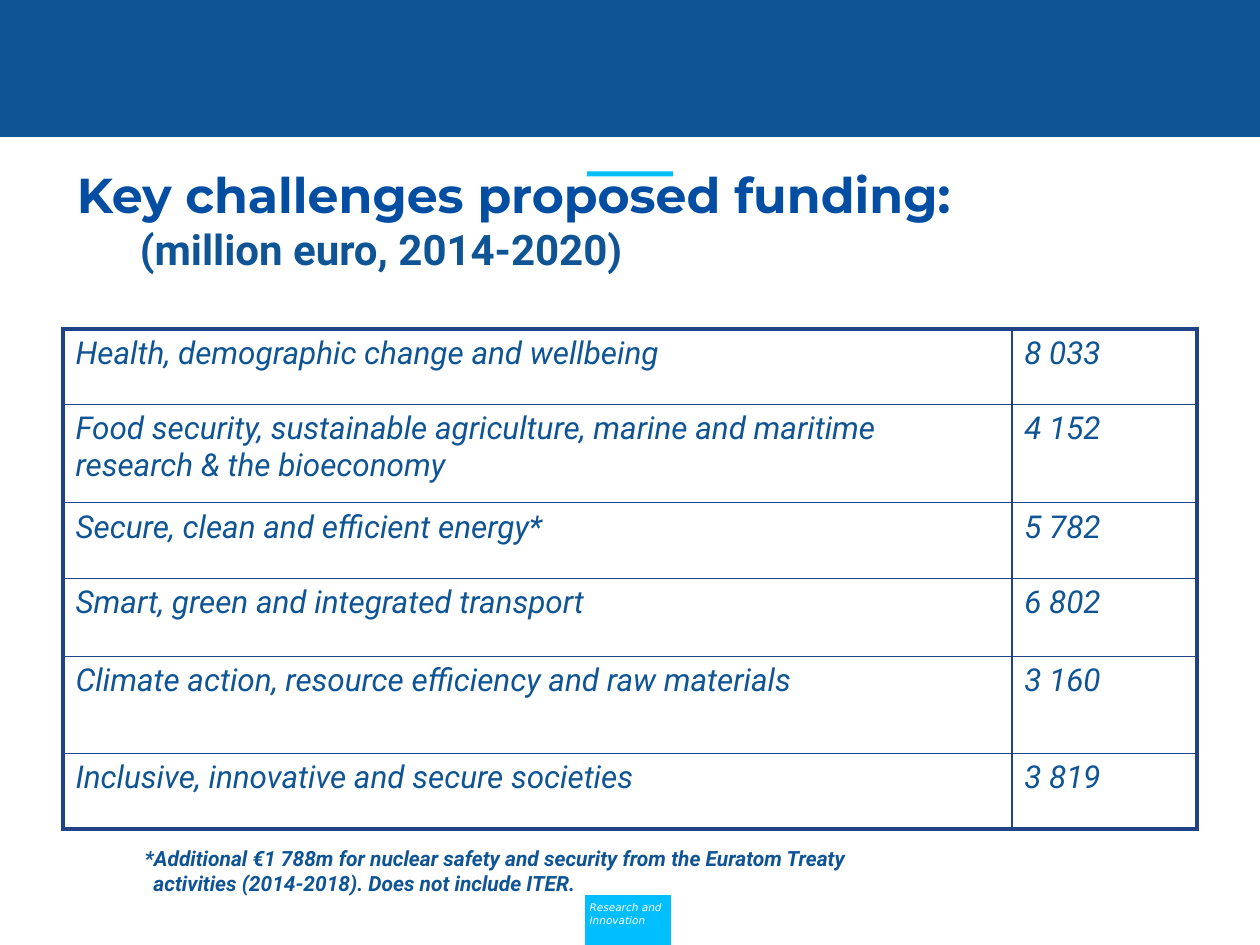
from lxml.etree import SubElement
from pptx import Presentation
from pptx.dml.color import RGBColor
from pptx.enum.shapes import MSO_SHAPE
from pptx.enum.text import MSO_ANCHOR, PP_ALIGN
from pptx.oxml import parse_xml
from pptx.oxml.ns import nsdecls, qn
from pptx.util import Inches, Pt

NAVY = RGBColor(0x0F, 0x54, 0x94)
TITLE_BLUE = RGBColor(0x03, 0x4E, 0xA2)
BORDER_BLUE = RGBColor(0x20, 0x43, 0x88)
CYAN = RGBColor(0x00, 0xBE, 0xFF)
WHITE = RGBColor(0xFF, 0xFF, 0xFF)

TITLE = "Key challenges proposed funding:"
SUBTITLE = "(million euro, 2014-2020)"
FUNDING = [
    ("Health, demographic change and wellbeing", "8 033", 0.6),
    ("Food security, sustainable agriculture, marine and maritime "
     "research & the bioeconomy", "4 152", 0.78),
    ("Secure, clean and efficient energy*", "5 782", 0.6),
    ("Smart, green and integrated transport", "6 802", 0.62),
    ("Climate action, resource efficiency and raw materials", "3 160", 0.77),
    ("Inclusive, innovative and secure societies", "3 819", 0.6),
]
COLUMN_WIDTHS = (7.53, 1.47)
FOOTNOTE = [
    "*Additional €1 788m for nuclear safety and security from the Euratom Treaty",
    "activities (2014-2018). Does not include ITER.",
]
DEPARTMENT = ["Research and", "Innovation"]

TITLE_FONT = dict(name="Montserrat", size=Pt(28), bold=True, color=TITLE_BLUE)
SUBTITLE_FONT = dict(name="Roboto", size=Pt(24), bold=True, color=NAVY)
CELL_FONT = dict(name="Roboto", size=Pt(18), italic=True, color=NAVY)
FOOTNOTE_FONT = dict(name="Roboto", size=Pt(12), bold=True, italic=True, color=NAVY)
DEPARTMENT_FONT = dict(name="DejaVu Sans", size=Pt(6), italic=True, color=WHITE)


def format_font(font, values):
    for key, value in values.items():
        if key == "color":
            font.color.rgb = value
        else:
            setattr(font, key, value)


def add_run(paragraph, text, values):
    run = paragraph.add_run()
    run.text = text
    format_font(run.font, values)


def set_indent(paragraph, left, first):
    properties = paragraph._p.get_or_add_pPr()
    properties.set("marL", str(Inches(left)))
    properties.set("indent", str(Inches(first)))


def set_insets(frame, left, top, right, bottom):
    frame.margin_left, frame.margin_top = Inches(left), Inches(top)
    frame.margin_right, frame.margin_bottom = Inches(right), Inches(bottom)


def add_block(slide, box, color, outlined=True):
    shape = slide.shapes.add_shape(MSO_SHAPE.RECTANGLE, *map(Inches, box))
    shape.shadow.inherit = False
    shape.fill.solid()
    shape.fill.fore_color.rgb = color
    if outlined:
        shape.line.color.rgb = color
        shape.line.width = Pt(0.75)
    else:
        shape.line.fill.background()
    return shape


def set_borders(cell, widths):
    properties = cell._tc.get_or_add_tcPr()
    for index, (side, width) in enumerate(widths.items()):
        line = parse_xml(f'<a:ln{side} {nsdecls("a")} w="{Pt(width)}"/>')
        fill = SubElement(line, qn("a:solidFill"))
        SubElement(fill, qn("a:srgbClr")).set("val", str(BORDER_BLUE))
        properties.insert(index, line)


def add_title(slide):
    title = slide.shapes.title
    title.left, title.top, title.width, title.height = map(Inches, (0.51, 1.23, 9, 1.02))
    frame = title.text_frame
    frame.word_wrap = True
    frame.vertical_anchor = MSO_ANCHOR.MIDDLE
    paragraph = frame.paragraphs[0]
    paragraph.alignment = PP_ALIGN.LEFT
    set_indent(paragraph, 0.5, -0.5)
    add_run(paragraph, TITLE, TITLE_FONT)
    paragraph.add_line_break()
    add_run(paragraph, SUBTITLE, SUBTITLE_FONT)
    slide.shapes._spTree.append(title._element)


def add_funding_table(slide):
    last_row, last_column = len(FUNDING) - 1, len(COLUMN_WIDTHS) - 1
    table = slide.shapes.add_table(
        len(FUNDING), len(COLUMN_WIDTHS), *map(Inches, (0.5, 2.61, 9, 3.97))).table
    table.first_row = table.horz_banding = False
    for column, width in zip(table.columns, COLUMN_WIDTHS):
        column.width = Inches(width)
    for row, (challenge, amount, height) in enumerate(FUNDING):
        table.rows[row].height = Inches(height)
        for column, text in enumerate((challenge, amount)):
            cell = table.cell(row, column)
            cell.fill.background()
            set_insets(cell, 0.1, 0.05, 0.1, 0.05)
            add_run(cell.text_frame.paragraphs[0], text, CELL_FONT)
            outer = dict(L=column == 0, R=column == last_column,
                         T=row == 0, B=row == last_row)
            set_borders(cell, {side: 2.25 if edge else 1 for side, edge in outer.items()})


def add_footnote(slide):
    frame = slide.shapes.add_textbox(*map(Inches, (0.67, 6.66, 8.43, 0.47))).text_frame
    frame.word_wrap = True
    paragraph = frame.paragraphs[0]
    set_indent(paragraph, 0.45, -0.07)
    add_run(paragraph, FOOTNOTE[0], FOOTNOTE_FONT)
    paragraph.add_line_break()
    add_run(paragraph, FOOTNOTE[1], FOOTNOTE_FONT)


def add_department(slide):
    frame = add_block(slide, (4.65, 7.11, 0.67, 0.39), CYAN).text_frame
    frame.word_wrap = True
    frame.vertical_anchor = MSO_ANCHOR.TOP
    set_insets(frame, 0.03, 0.04, 0.03, 0.05)
    frame.text = "\n".join(DEPARTMENT)
    for paragraph in frame.paragraphs:
        paragraph.alignment = PP_ALIGN.LEFT
        format_font(paragraph.runs[0].font, DEPARTMENT_FONT)


def main():
    presentation = Presentation()
    presentation.slide_width, presentation.slide_height = Inches(10), Inches(7.5)
    slide = presentation.slides.add_slide(presentation.slide_layouts[5])
    add_block(slide, (0, 0, 10, 1.08), NAVY)
    add_department(slide)
    add_block(slide, (4.66, 1.36, 0.68, 0.04), CYAN, outlined=False)
    add_title(slide)
    add_funding_table(slide)
    add_footnote(slide)
    presentation.save("out.pptx")


if __name__ == "__main__":
    main()
